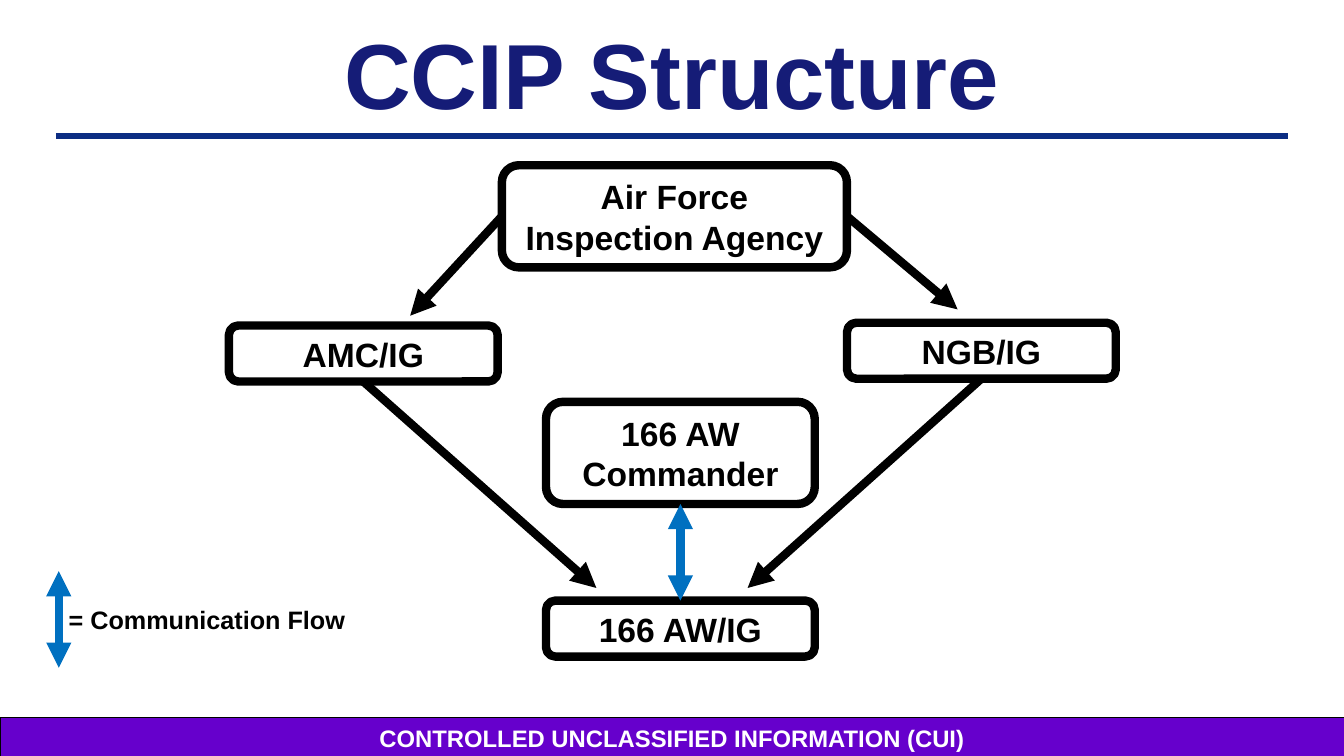
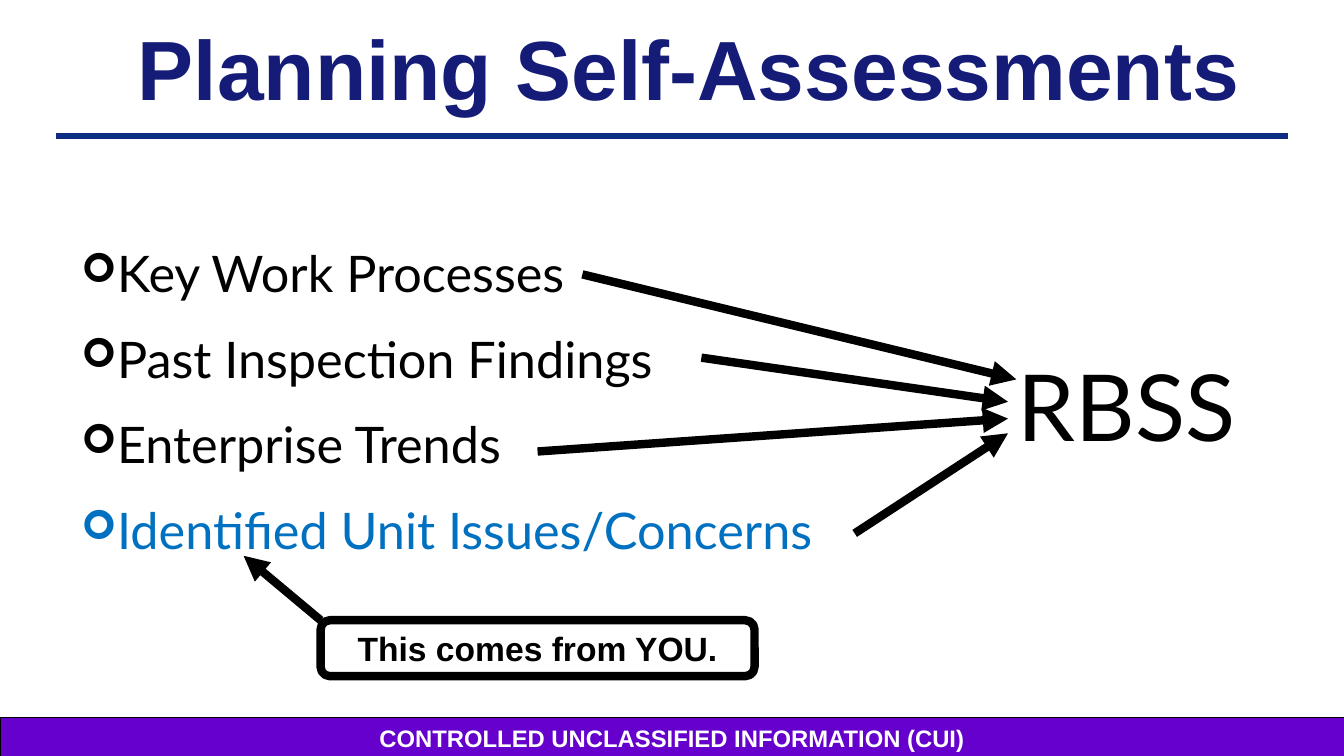
import dataclasses

import lxml.etree
import pptx
import pptx.dml.color
import pptx.enum.shapes
import pptx.enum.text
import pptx.oxml.ns
import pptx.util

Pt = pptx.util.Pt
ALIGN = pptx.enum.text.PP_ALIGN
ANCHOR = pptx.enum.text.MSO_ANCHOR
SHAPE = pptx.enum.shapes.MSO_SHAPE
TITLE_ONLY = 5
TOP_SIDE, LEFT_SIDE, BOTTOM_SIDE, RIGHT_SIDE = range(4)


@dataclasses.dataclass(frozen=True)
class Theme:
    width: int = 960
    height: int = 540
    heading_font: str = "Arial"
    body_font: str = "Lato"
    title: str = "151C77"
    rule: str = "0C2D83"
    band: str = "6600CC"
    white: str = "FFFFFF"
    ink: str = "000000"
    accent: str = "0070C0"
    huge: int = 66
    large: int = 60
    bullet: int = 36
    label: int = 24
    legend: int = 18
    footer: int = 17
    stroke: int = 6


def rgb(color):
    return pptx.dml.color.RGBColor.from_string(color)


def add_xml(parent, tag, **attributes):
    return lxml.etree.SubElement(parent, pptx.oxml.ns.qn(tag), attributes)


def is_point(place):
    return isinstance(place[0], (int, float))


class Briefing:
    """Holds the theme, the deck and the page being filled."""

    def __init__(self, theme):
        self.theme = theme
        self.deck = pptx.Presentation()
        self.deck.slide_width = Pt(theme.width)
        self.deck.slide_height = Pt(theme.height)
        self.page = None

    def new_page(self, title, size, left, top):
        theme = self.theme
        self.page = self.deck.slides.add_slide(self.deck.slide_layouts[TITLE_ONLY])
        self.line((40, 97), (920, 97), theme.rule, 4.5)
        self.footer("CONTROLLED UNCLASSIFIED INFORMATION (CUI)")
        box = self.page.shapes.title
        box.left, box.top = Pt(left), Pt(top)
        box.width, box.height = Pt(theme.width), Pt(48)
        self.frame(box, ANCHOR.MIDDLE)
        self.add_text(box.text_frame.paragraphs[0], title, size, theme.title, align=ALIGN.CENTER)

    def frame(self, box, anchor):
        box.text_frame.word_wrap = True
        box.text_frame.auto_size = pptx.enum.text.MSO_AUTO_SIZE.NONE
        box.text_frame.vertical_anchor = anchor

    def add_text(self, para, words, size, color, font=None, bold=True, align=ALIGN.LEFT):
        para.alignment = align
        span = para.add_run()
        span.text = words
        span.font.name = font or self.theme.heading_font
        span.font.size = Pt(size)
        span.font.bold = bold
        span.font.color.rgb = rgb(color)

    def shape(self, kind, left, top, width, height, stroke):
        box = self.page.shapes.add_shape(kind, Pt(left), Pt(top), Pt(width), Pt(height))
        box.shadow.inherit = False
        box.fill.background()
        box.line.color.rgb = rgb(self.theme.ink)
        box.line.width = Pt(stroke)
        self.frame(box, ANCHOR.MIDDLE)
        return box

    def footer(self, words):
        theme = self.theme
        band = self.shape(SHAPE.RECTANGLE, 0, 512.5, theme.width, 29, 0.5)
        band.fill.solid()
        band.fill.fore_color.rgb = rgb(theme.band)
        para = band.text_frame.paragraphs[0]
        self.add_text(para, words, theme.footer, theme.white, align=ALIGN.CENTER)

    def label_box(self, words, left, top, width=192, height=40):
        theme = self.theme
        box = self.shape(SHAPE.ROUNDED_RECTANGLE, left, top, width, height, theme.stroke)
        para = box.text_frame.paragraphs[0]
        para.line_spacing = Pt(29)
        self.add_text(para, words, theme.label, theme.ink, align=ALIGN.CENTER)
        return box

    def text_box(self, left, top, width, height):
        box = self.page.shapes.add_textbox(Pt(left), Pt(top), Pt(width), Pt(height))
        self.frame(box, ANCHOR.TOP)
        return box.text_frame

    def bullets(self, items, left, top, width, height):
        """Set a list of (words, color) pairs with arrow bullets."""
        text = self.text_box(left, top, width, height)
        text.margin_left = text.margin_top = 0
        for index, (words, color) in enumerate(items):
            para = text.add_paragraph() if index else text.paragraphs[0]
            properties = para._p.get_or_add_pPr()
            properties.set("marL", str(Pt(41)))
            properties.set("indent", str(Pt(-22)))
            add_xml(properties, "a:buSzPct", val="80000")
            add_xml(properties, "a:buFont", typeface="Wingdings")
            add_xml(properties, "a:buChar", char="➢")
            if index:
                para.space_before = Pt(18)
            self.add_text(para, words, self.theme.bullet, color, self.theme.body_font, False)

    def line(self, start, end, color, width):
        line = self.page.shapes.add_connector(
            pptx.enum.shapes.MSO_CONNECTOR.STRAIGHT, *(Pt(value) for value in start + end))
        line.line.color.rgb = rgb(color)
        line.line.width = Pt(width)
        add_xml(line._element.spPr, "a:effectLst")
        return line

    def arrow(self, start, end, color=None, both=False):
        """Draw an arrow; each end is an (x, y) point or a (box, side) pair."""
        points = [place if is_point(place) else (0, 0) for place in (start, end)]
        line = self.line(*points, color or self.theme.ink, self.theme.stroke)
        for place, connect in ((start, line.begin_connect), (end, line.end_connect)):
            if not is_point(place):
                connect(*place)
        outline = line._element.spPr.find(pptx.oxml.ns.qn("a:ln"))
        for tag in ("a:headEnd", "a:tailEnd") if both else ("a:tailEnd",):
            add_xml(outline, tag, type="triangle")


def add_structure(briefing):
    theme = briefing.theme
    briefing.new_page("CCIP Structure", theme.huge, 0, 27.5)
    agency = briefing.label_box("Air Force Inspection Agency", 358.5, 118, 246.5, 73)
    command = briefing.label_box("AMC/IG", 163.5, 232.5)
    bureau = briefing.label_box("NGB/IG", 605, 230.5)
    commander = briefing.label_box("166 AW Commander", 390, 287, height=73)
    inspector = briefing.label_box("166 AW/IG", 390, 429)

    briefing.arrow((command, BOTTOM_SIDE), (426, 420))
    briefing.arrow((bureau, BOTTOM_SIDE), (534, 420))
    briefing.arrow((commander, BOTTOM_SIDE), (inspector, TOP_SIDE), theme.accent, both=True)
    briefing.arrow((agency, LEFT_SIDE), (293, 225.5))
    briefing.arrow((agency, RIGHT_SIDE), (684, 221))

    briefing.arrow((42, 408), (42, 477), theme.accent, both=True)
    legend = briefing.text_box(42, 428, 221, 29)
    briefing.add_text(legend.paragraphs[0], "= Communication Flow", theme.legend, theme.ink)


def add_planning(briefing):
    theme = briefing.theme
    briefing.new_page("Planning Self-Assessments", theme.large, 12, 24)
    briefing.bullets([
        ("Key Work Processes", theme.ink),
        ("Past Inspection Findings", theme.ink),
        ("Enterprise Trends", theme.ink),
        ("Identified Unit Issues/Concerns", theme.accent),
    ], 39, 173, 640, 230)
    result = briefing.text_box(720, 246, 183, 87)
    briefing.add_text(result.paragraphs[0], "RBSS", theme.huge, theme.ink, theme.body_font, False)
    for start, end in (
        ((416, 196), (726, 271)),
        ((501, 255.5), (720, 287)),
        ((384, 322.5), (720, 299)),
        ((610.5, 381), (720, 309.5)),
        ((229, 443), (174, 397)),
    ):
        briefing.arrow(start, end)
    briefing.label_box("This comes from YOU.", 229, 443, 310)


def main():
    briefing = Briefing(Theme())
    add_structure(briefing)
    add_planning(briefing)
    briefing.deck.save("out.pptx")


if __name__ == "__main__":
    main()
